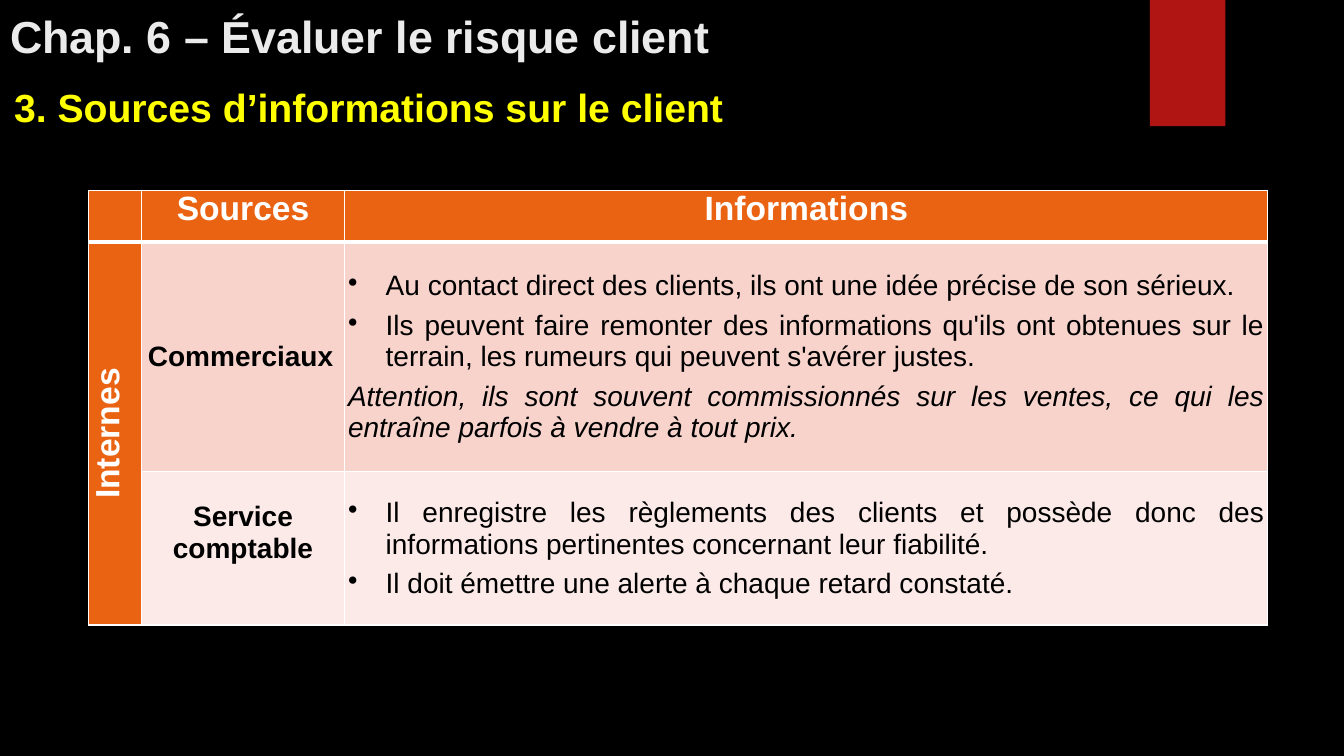
from dataclasses import dataclass

from lxml import etree
from pptx import Presentation
from pptx.dml import color
from pptx.enum import shapes, text
from pptx.oxml import ns
from pptx.util import Cm, Pt

FONT = "Arial"
WHITE, BLACK, ORANGE = "FFFFFF", "000000", "EA6312"
ROSE, PALE_ROSE = "F7D3CC", "FBEAE7"
CENTER, JUSTIFY = text.PP_ALIGN.CENTER, text.PP_ALIGN.JUSTIFY
TOP, MIDDLE = text.MSO_ANCHOR.TOP, text.MSO_ANCHOR.MIDDLE


@dataclass
class Line:
    wording: str
    size: float = 20
    hue: str = BLACK
    bold: bool = False
    italic: bool = False
    bullet: bool = False
    align: text.PP_ALIGN = JUSTIFY
    spacing: float = 3


@dataclass
class CellSpec:
    row: int
    column: int
    fill: str
    lines: tuple[Line, ...] = ()
    anchor: text.MSO_ANCHOR = MIDDLE
    right: float = 0.08
    bottom: float = 0
    vertical: bool = False


def rgb(code: str) -> color.RGBColor:
    return color.RGBColor.from_string(code)


def write_lines(frame, lines: tuple[Line, ...]) -> None:
    for index, line in enumerate(lines):
        paragraph = frame.paragraphs[0] if index == 0 else frame.add_paragraph()
        if line.bullet:
            properties = paragraph._p.get_or_add_pPr()
            properties.set("marL", str(Cm(0.95)))
            properties.set("indent", str(-Cm(0.95)))
            etree.SubElement(properties, ns.qn("a:buChar"), char="•")
        paragraph.alignment = line.align
        paragraph.space_before = Pt(line.spacing if index else 0)
        paragraph.space_after = Pt(line.spacing)
        run = paragraph.add_run()
        run.text = line.wording
        run.font.name, run.font.size = FONT, Pt(line.size)
        run.font.bold, run.font.italic = line.bold, line.italic
        run.font.color.rgb = rgb(line.hue)


def fill_placeholder(shape, box: tuple[float, ...], anchor, line: Line) -> None:
    shape.left, shape.top, shape.width, shape.height = map(Cm, box)
    frame = shape.text_frame
    frame.word_wrap = True
    frame.auto_size = text.MSO_AUTO_SIZE.NONE
    frame.vertical_anchor = anchor
    write_lines(frame, (line,))


def draw_borders(cell, bottom_width: float) -> None:
    properties = cell._tc.get_or_add_tcPr()
    widths = {"lnL": 1, "lnR": 1, "lnT": 1, "lnB": bottom_width}
    for index, (side, width) in enumerate(widths.items()):
        border = etree.Element(ns.qn(f"a:{side}"), w=str(Pt(width)))
        solid = etree.SubElement(border, ns.qn("a:solidFill"))
        etree.SubElement(solid, ns.qn("a:srgbClr"), val=WHITE)
        properties.insert(index, border)


def fill_cell(cell, spec: CellSpec) -> None:
    cell.fill.solid()
    cell.fill.fore_color.rgb = rgb(spec.fill)
    cell.margin_left, cell.margin_right = Cm(0.08), Cm(spec.right)
    cell.margin_top, cell.margin_bottom = 0, Cm(spec.bottom)
    cell.vertical_anchor = spec.anchor
    if spec.vertical:
        cell._tc.get_or_add_tcPr().set("vert", "vert270")
    write_lines(cell.text_frame, spec.lines)


def heading(wording: str, spacing: float = 3) -> Line:
    return Line(wording, 24, WHITE, bold=True, align=CENTER, spacing=spacing)


def source(wording: str) -> Line:
    return Line(wording, bold=True, align=CENTER, spacing=0)


CELLS = (
    CellSpec(0, 0, ORANGE),
    CellSpec(0, 1, ORANGE, (heading("Sources"),), TOP),
    CellSpec(0, 2, ORANGE, (heading("Informations"),), TOP),
    CellSpec(1, 0, ORANGE, (heading("Internes", 0),), TOP, vertical=True),
    CellSpec(1, 1, ROSE, (source("Commerciaux"),), right=0.2),
    CellSpec(1, 2, ROSE, (
        Line("Au contact direct des clients, ils ont une idée précise de son sérieux.", bullet=True),
        Line("Ils peuvent faire remonter des informations qu'ils ont obtenues sur le terrain, "
             "les rumeurs qui peuvent s'avérer justes.", bullet=True),
        Line("Attention, ils sont souvent commissionnés sur les ventes, ce qui les entraîne "
             "parfois à vendre à tout prix.", italic=True),
    )),
    CellSpec(2, 1, PALE_ROSE, (source("Service comptable"),), bottom=0.79),
    CellSpec(2, 2, PALE_ROSE, (
        Line("Il enregistre les règlements des clients et possède donc des informations "
             "pertinentes concernant leur fiabilité.", bullet=True),
        Line("Il doit émettre une alerte à chaque retard constaté.", bullet=True),
    )),
)


def add_sources_table(slide) -> None:
    columns, rows = (1.32, 5.13, 23.26), (1.3, 5.79, 3.86)
    frame = slide.shapes.add_table(
        len(rows), len(columns), Cm(2.24), Cm(4.8), Cm(sum(columns)), Cm(sum(rows)))
    table = frame.table
    table.horz_banding = False
    for column, width in zip(table.columns, columns):
        column.width = Cm(width)
    for row, height in zip(table.rows, rows):
        row.height = Cm(height)
    table.cell(1, 0).merge(table.cell(2, 0))
    for spec in CELLS:
        fill_cell(table.cell(spec.row, spec.column), spec)
    for index, cell in enumerate(table.iter_cells()):
        draw_borders(cell, 3 if index < len(columns) else 1)


def main() -> None:
    presentation = Presentation()
    presentation.slide_width, presentation.slide_height = Cm(33.87), Cm(19.05)
    slide = presentation.slides.add_slide(presentation.slide_layouts[0])
    slide.background.fill.solid()
    slide.background.fill.fore_color.rgb = rgb(BLACK)

    # Red tab at the top
    tab = slide.shapes.add_shape(
        shapes.MSO_SHAPE.RECTANGLE, Cm(28.98), 0, Cm(1.9), Cm(3.18))
    tab.shadow.inherit = False
    tab.fill.solid()
    tab.fill.fore_color.rgb = rgb("B01513")
    tab.line.fill.background()

    # Chapter title and section heading
    left = text.PP_ALIGN.LEFT
    fill_placeholder(
        slide.shapes.title, (0, 0, 28.8, 1.7), text.MSO_ANCHOR.BOTTOM,
        Line("Chap. 6 – Évaluer le risque client", 32, "EBEBEB", True, align=left, spacing=0))
    fill_placeholder(
        slide.placeholders[1], (0.1, 1.98, 23.06, 1.45), TOP,
        Line("3. Sources d’informations sur le client", 28, "FFFF00", True, align=left, spacing=0))

    # Table of information sources
    add_sources_table(slide)
    presentation.save("out.pptx")


if __name__ == "__main__":
    main()
